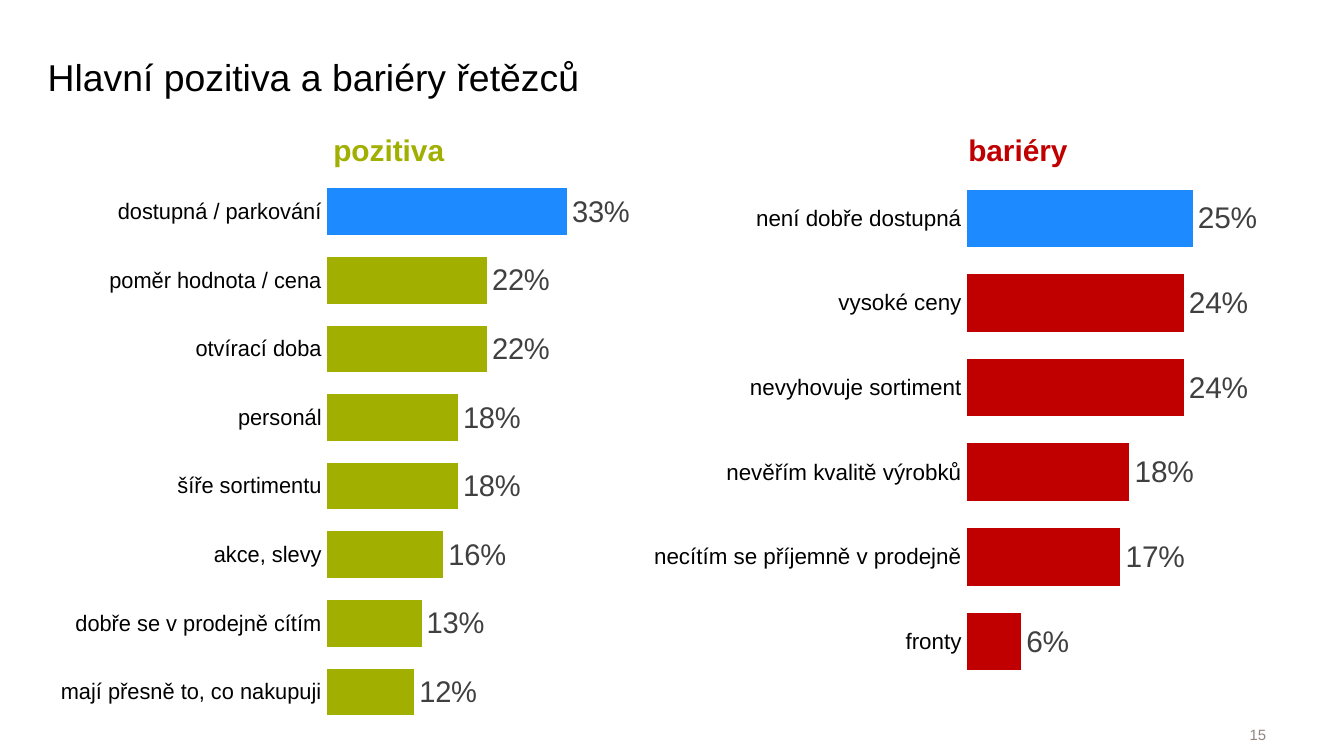
from lxml.etree import SubElement
from pptx import Presentation
from pptx.chart.data import CategoryChartData
from pptx.dml.color import RGBColor
from pptx.enum.chart import XL_CHART_TYPE, XL_LABEL_POSITION, XL_TICK_MARK
from pptx.enum.text import MSO_ANCHOR, PP_ALIGN
from pptx.oxml.ns import qn
from pptx.util import Cm, Pt

COLORS = {
    "text": "000000",
    "label": "404040",
    "number": "928580",
    "positive": "A1AF00",
    "barrier": "C00000",
    "top": "1D8BFF",
}

POSITIVES = {
    "dostupná / parkování": 0.33,
    "poměr hodnota / cena": 0.22,
    "otvírací doba": 0.22,
    "personál": 0.18,
    "šíře sortimentu": 0.18,
    "akce, slevy": 0.16,
    "dobře se v prodejně cítím": 0.13,
    "mají přesně to, co nakupuji": 0.12,
}
BARRIERS = {
    "není dobře dostupná": 0.25,
    "vysoké ceny": 0.24,
    "nevyhovuje sortiment": 0.24,
    "nevěřím kvalitě výrobků": 0.18,
    "necítím se příjemně v prodejně": 0.17,
    "fronty": 0.06,
}


def set_font(font, size, color, bold=False):
    """Apply the slide's typeface with a size and a named colour."""
    font.name = "Arial"
    font.size = Pt(size)
    font.bold = bold
    font.color.rgb = RGBColor.from_string(COLORS[color])


def add_text(slide, box, text, size, color, bold=False,
             align=PP_ALIGN.LEFT, anchor=MSO_ANCHOR.TOP):
    """Place one line of text without margins in a box given in cm."""
    frame = slide.shapes.add_textbox(*map(Cm, box)).text_frame
    frame.word_wrap = True
    frame.vertical_anchor = anchor
    frame.margin_left = frame.margin_right = 0
    frame.margin_top = frame.margin_bottom = 0
    paragraph = frame.paragraphs[0]
    paragraph.text = text
    paragraph.alignment = align
    set_font(paragraph.font, size, color, bold)


def set_plot_box(chart, plot_box):
    """Fix the inner plot area as fractions of the chart."""
    plot_area = chart.element.find(qn("c:chart")).find(qn("c:plotArea"))
    for layout in plot_area.findall(qn("c:layout")):
        plot_area.remove(layout)
    layout = SubElement(plot_area, qn("c:layout"))
    plot_area.insert(0, layout)
    manual = SubElement(layout, qn("c:manualLayout"))
    settings = [("layoutTarget", "inner"), ("xMode", "edge"), ("yMode", "edge")]
    settings += zip("xywh", plot_box)
    for tag, value in settings:
        SubElement(manual, qn(f"c:{tag}")).set("val", str(value))


def add_ranking(slide, box, plot_box, shares, color, maximum):
    """Draw a ranked bar chart whose leading bar is highlighted."""
    ranking = CategoryChartData(number_format="0%")
    ranking.categories = list(shares)
    ranking.add_series("Series 1", list(shares.values()))
    chart = slide.shapes.add_chart(
        XL_CHART_TYPE.BAR_CLUSTERED, *map(Cm, box), ranking).chart
    set_font(chart.font, 16, "text")
    chart.has_title = False
    chart.has_legend = False
    set_plot_box(chart, plot_box)

    reasons = chart.category_axis
    reasons.reverse_order = True
    reasons.major_tick_mark = XL_TICK_MARK.NONE
    reasons.format.line.fill.background()
    set_font(reasons.tick_labels.font, 12, "text")

    scale = chart.value_axis
    scale.visible = False
    scale.has_major_gridlines = False
    scale.minimum_scale = 0
    scale.maximum_scale = maximum

    plot = chart.plots[0]
    plot.gap_width = 47
    plot.vary_by_categories = False
    bars = plot.series[0]
    for target, name in ((bars, color), (bars.points[0], "top")):
        target.format.fill.solid()
        target.format.fill.fore_color.rgb = RGBColor.from_string(COLORS[name])

    labels = bars.data_labels
    labels.show_value = True
    labels.number_format = "0%"
    labels.number_format_is_linked = False
    labels.position = XL_LABEL_POSITION.OUTSIDE_END
    set_font(labels.font, 16, "label")


def build_slide(presentation):
    """Compose the title, both rankings and the slide number."""
    slide = presentation.slides.add_slide(presentation.slide_layouts[6])
    add_text(slide, (20.32, 13.74, 3.61, 0.3), "15", 8, "number",
             align=PP_ALIGN.RIGHT, anchor=MSO_ANCHOR.MIDDLE)
    add_text(slide, (0.9, 0.53, 17.6, 1.35), "Hlavní pozitiva a bariéry řetězců",
             20, "text", anchor=MSO_ANCHOR.BOTTOM)
    add_text(slide, (6.3, 2.49, 2.8, 0.86), "pozitiva", 16, "positive", bold=True)
    add_text(slide, (18.3, 2.49, 3.2, 0.86), "bariéry", 16, "barrier", bold=True)
    add_ranking(slide, (0.3, 2.9, 11.6, 11.4), (0.52, 0.04, 0.45, 0.91),
                POSITIVES, "positive", 0.37)
    add_ranking(slide, (12.1, 3.23, 12.6, 9.8), (0.49, 0.01, 0.42, 0.98),
                BARRIERS, "barrier", 0.31)


def main():
    """Build and save the presentation."""
    presentation = Presentation()
    presentation.slide_width = Cm(25.4)
    presentation.slide_height = Cm(14.29)
    build_slide(presentation)
    presentation.save("out.pptx")


if __name__ == "__main__":
    main()
